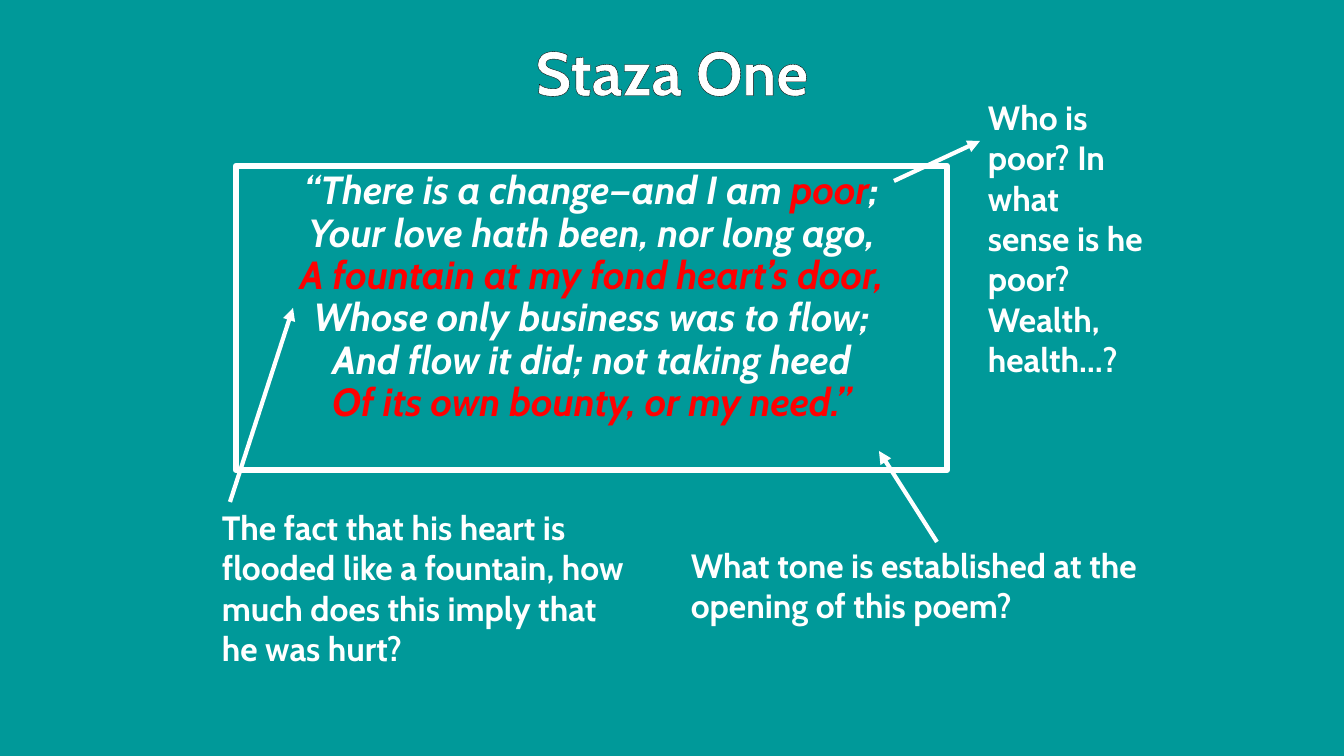
from lxml import etree
from pptx import Presentation, util as u
from pptx.dml.color import RGBColor
from pptx.enum import shapes, text
from pptx.oxml.ns import qn

# Content: lengths in px
SIZE = (1344, 756)
COLOURS = {"teal": "009999", "white": "FFFFFF", "red": "FF0000", "black": "000000"}
FONT = "Cabin"
TITLE = ("Staza One", (168, 29, 1008, 85))
POEM_BOX = (236, 166, 711, 304)
POEM = [
    [("“There is a change—and I am ", "white"), ("poor", "red"), (";", "white")],
    [("Your love hath been, nor long ago,", "white")],
    [("A fountain at my fond heart’s door,", "red")],
    [("Whose only business was to flow;", "white")],
    [("And flow it did; not taking heed", "white")],
    [("Of its own bounty, or my need.”", "red")],
]
# Each question: wording, box, arrow start, arrow end
QUESTIONS = [
    ("Who is poor? In what sense is he poor? Wealth, health…?",
     (978, 92, 176, 295), (894, 181), (980, 141)),
    ("The fact that his heart is flooded like a fountain, how much does this imply that he was hurt?",
     (212, 502, 434, 173), (230, 502), (293, 308)),
    ("What tone is established at the opening of this poem?",
     (681, 540, 504, 92), (937, 542), (879, 451)),
]
TITLE_FORMAT = {"name": FONT, "size": u.Pt(44), "bold": True}
POEM_FORMAT = {"name": FONT, "size": u.Pt(28), "bold": True, "italic": True}
QUESTION_FORMAT = {"name": FONT, "size": u.Pt(24), "bold": True}
SCALE = u.Inches(1) / 100.8


def emu(lengths):
    return [round(length * SCALE) for length in lengths]


def rgb(name):
    return RGBColor.from_string(COLOURS[name])


def add_span(para, words, colour, formats):
    span = para.add_run()
    span.text = words
    for name, value in formats.items():
        setattr(span.font, name, value)
    span.font.color.rgb = rgb(colour)
    return span


def add_label(page, words, place, formats):
    box = page.shapes.add_textbox(*emu(place))
    box.text_frame.word_wrap = True
    box.text_frame.auto_size = text.MSO_AUTO_SIZE.SHAPE_TO_FIT_TEXT
    para = box.text_frame.paragraphs[0]
    return para, add_span(para, words, "white", formats)


def set_line(shape, width):
    shape.line.color.rgb = rgb("white")
    shape.line.width = u.Pt(width)


def add_arrow(page, start, end):
    arrow = page.shapes.add_connector(shapes.MSO_CONNECTOR.STRAIGHT, *emu(start + end))
    set_line(arrow, 3)
    etree.SubElement(arrow.line._get_or_add_ln(), qn("a:tailEnd"), type="triangle")
    etree.SubElement(arrow._element.spPr, qn("a:effectLst"))


def outline_text(span, colour, width):
    line = etree.Element(qn("a:ln"), w=str(u.Pt(width)))
    fill = etree.SubElement(line, qn("a:solidFill"))
    etree.SubElement(fill, qn("a:srgbClr"), val=COLOURS[colour])
    span.font._element.insert(0, line)


def add_poem(page):
    box = page.shapes.add_shape(shapes.MSO_SHAPE.RECTANGLE, *emu(POEM_BOX))
    box.shadow.inherit = False
    box.fill.background()
    set_line(box, 4.5)
    box.text_frame.word_wrap = True
    box.text_frame.vertical_anchor = text.MSO_ANCHOR.TOP
    para = box.text_frame.paragraphs[0]
    para.alignment = text.PP_ALIGN.CENTER
    para.line_spacing = 0.9
    for number, verse in enumerate(POEM):
        if number:
            para.add_line_break()
        for words, colour in verse:
            add_span(para, words, colour, POEM_FORMAT)


def main():
    deck = Presentation()
    deck.slide_width, deck.slide_height = emu(SIZE)
    page = deck.slides.add_slide(deck.slide_layouts[6])
    page.background.fill.solid()
    page.background.fill.fore_color.rgb = rgb("teal")

    # Title
    para, span = add_label(page, *TITLE, TITLE_FORMAT)
    para.alignment = text.PP_ALIGN.CENTER
    outline_text(span, "black", 1.5)

    # Framed stanza, then the questions pointing at it
    add_poem(page)
    for words, place, start, end in QUESTIONS:
        add_label(page, words, place, QUESTION_FORMAT)
        add_arrow(page, start, end)

    deck.save("out.pptx")


if __name__ == "__main__":
    main()
